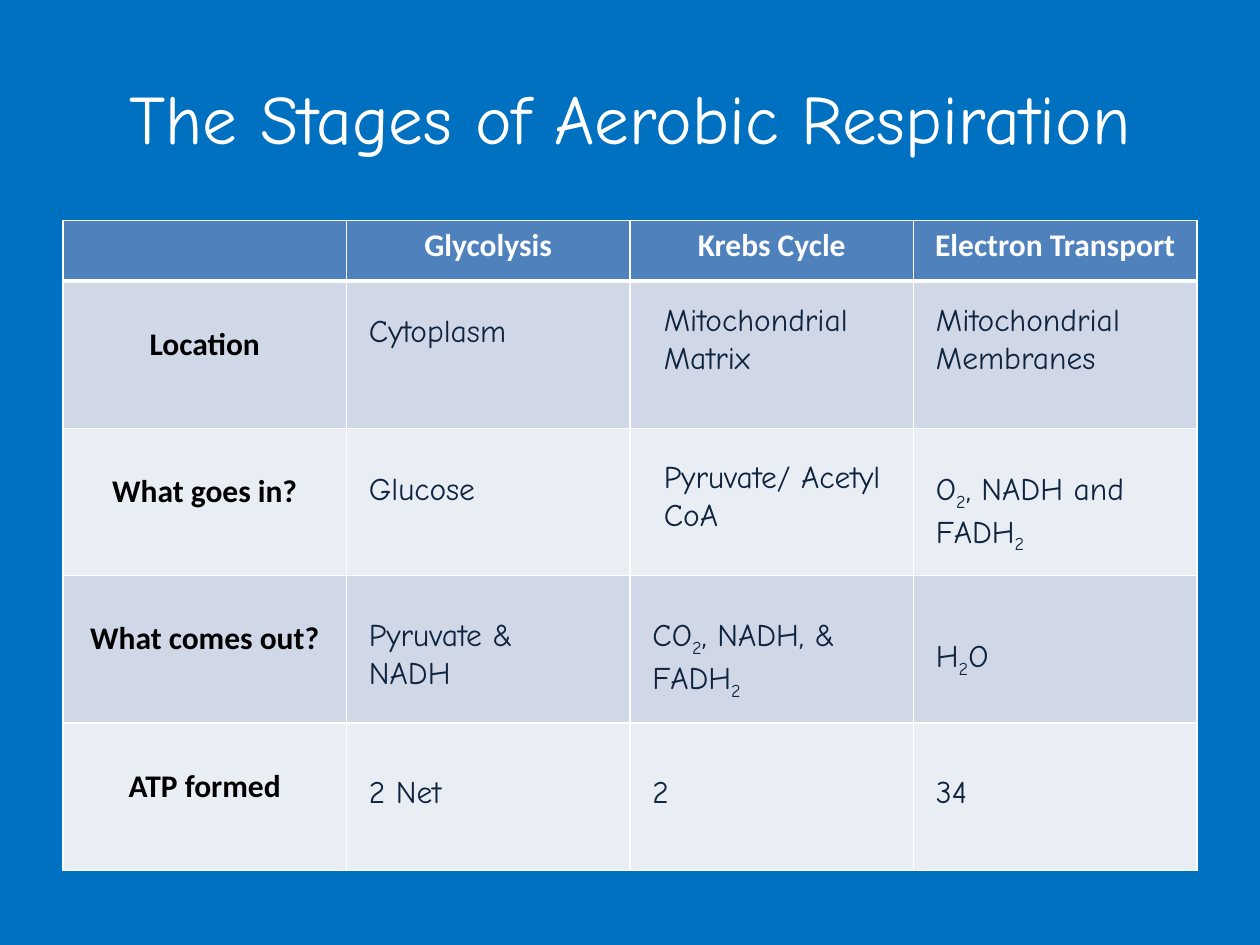
from lxml import etree
from pptx import Presentation
from pptx.dml.color import RGBColor
from pptx.enum.text import MSO_ANCHOR, MSO_AUTO_SIZE, PP_ALIGN
from pptx.oxml.ns import qn
from pptx.util import Inches, Pt

CENTER = PP_ALIGN.CENTER
MIDDLE = MSO_ANCHOR.MIDDLE
GROW = MSO_AUTO_SIZE.SHAPE_TO_FIT_TEXT

HEADERS = ["", "Glycolysis", "Krebs Cycle", "Electron Transport"]
LABELS = ["Location", "What goes in?", "What comes out?", "ATP formed"]

# Left, top, height and text of each answer; _x_ marks a subscript.
ANSWERS = [
    (2.83, 2.42, 0.4, "Cytoplasm"),
    (5.17, 2.33, 0.71, "Mitochondrial Matrix"),
    (7.33, 2.33, 0.71, "Mitochondrial\nMembranes"),
    (2.83, 3.67, 0.4, "Glucose"),
    (5.17, 3.58, 0.71, "Pyruvate/ Acetyl CoA"),
    (7.33, 3.67, 0.71, "O_2_, NADH and FADH_2_"),
    (2.83, 4.83, 0.71, "Pyruvate &\nNADH"),
    (5.08, 4.83, 0.71, "CO_2_, NADH, & FADH_2_"),
    (7.33, 5, 0.4, "H_2_O"),
    (2.83, 6.08, 0.4, "2 Net"),
    (5.08, 6.08, 0.4, "2"),
    (7.33, 6.08, 0.4, "34"),
]


def rgb(value):
    return RGBColor.from_string(value)


class SlideBuilder:
    background = "0070C0"
    white = "FFFFFF"
    header_fill = "4F81BD"
    bands = ["D0D8E8", "E9EDF4"]
    label_color = "000000"
    answer_color = "0F243E"
    hand_font = "Comic Neue"
    table_font = "Calibri"
    size = 18

    def __init__(self, prs):
        self.slide = prs.slides.add_slide(prs.slide_layouts[6])
        fill = self.slide.background.fill
        fill.solid()
        fill.fore_color.rgb = rgb(self.background)

    def format_run(self, r, font, size, color, bold=False):
        r.font.name = font
        r.font.size = Pt(size)
        r.font.color.rgb = rgb(color)
        r.font.bold = bold

    def text_box(self, left, top, width, height):
        sp = self.slide.shapes.add_textbox(
            Inches(left), Inches(top), Inches(width), Inches(height))
        sp.text_frame.word_wrap = True
        return sp.text_frame

    def title(self, text):
        tf = self.text_box(0.5, 0.3, 9, 1.25)
        tf.vertical_anchor = MIDDLE
        tf.text = text
        p = tf.paragraphs[0]
        p.alignment = CENTER
        self.format_run(p.runs[0], self.hand_font, 39.6, self.white)

    def answer(self, left, top, height, text):
        tf = self.text_box(left, top, 2.08, height)
        tf.auto_size = GROW
        for i, line in enumerate(text.split("\n")):
            p = tf.add_paragraph() if i else tf.paragraphs[0]
            for j, part in enumerate(line.split("_")):
                if not part:
                    continue
                r = p.add_run()
                r.text = part
                self.format_run(r, self.hand_font, self.size, self.answer_color)
                if j % 2:
                    r.font._element.set("baseline", "-25000")

    def borders(self, cell, top, bottom):
        """Draw white lines round a cell; top and bottom are widths in points."""
        tc_pr = cell._tc.get_or_add_tcPr()
        widths = {"lnL": 1, "lnR": 1, "lnT": top, "lnB": bottom}
        for i, (side, width) in enumerate(widths.items()):
            ln = etree.Element(qn("a:" + side), w=str(Pt(width)))
            fill = etree.SubElement(ln, qn("a:solidFill"))
            etree.SubElement(fill, qn("a:srgbClr"), val=self.white)
            tc_pr.insert(i, ln)

    def cell(self, cell, text, fill, color):
        cell.fill.solid()
        cell.fill.fore_color.rgb = rgb(fill)
        cell.text = text
        p = cell.text_frame.paragraphs[0]
        p.alignment = CENTER
        for r in p.runs:
            self.format_run(r, self.table_font, self.size, color, bold=True)

    def table(self, headers, labels):
        table = self.slide.shapes.add_table(
            len(labels) + 1, len(headers),
            Inches(0.5), Inches(1.75), Inches(9), Inches(5.16)).table
        for column in table.columns:
            column.width = Inches(2.25)
        for i, row in enumerate(table.rows):
            row.height = Inches(1.17 if i else 0.48)
            for j, cell in enumerate(row.cells):
                if i == 0:
                    self.cell(cell, headers[j], self.header_fill, self.white)
                else:
                    text = "" if j else labels[i - 1]
                    self.cell(cell, text, self.bands[(i - 1) % 2], self.label_color)
                    cell.margin_top = Inches(0.35)
                self.borders(cell, 3 if i == 1 else 1, 1 if i else 3)


def main():
    prs = Presentation()
    prs.slide_width = Inches(10)
    prs.slide_height = Inches(7.5)
    builder = SlideBuilder(prs)
    builder.title("The Stages of Aerobic Respiration")
    builder.table(HEADERS, LABELS)
    for answer in ANSWERS:
        builder.answer(*answer)
    prs.save("out.pptx")


if __name__ == "__main__":
    main()
